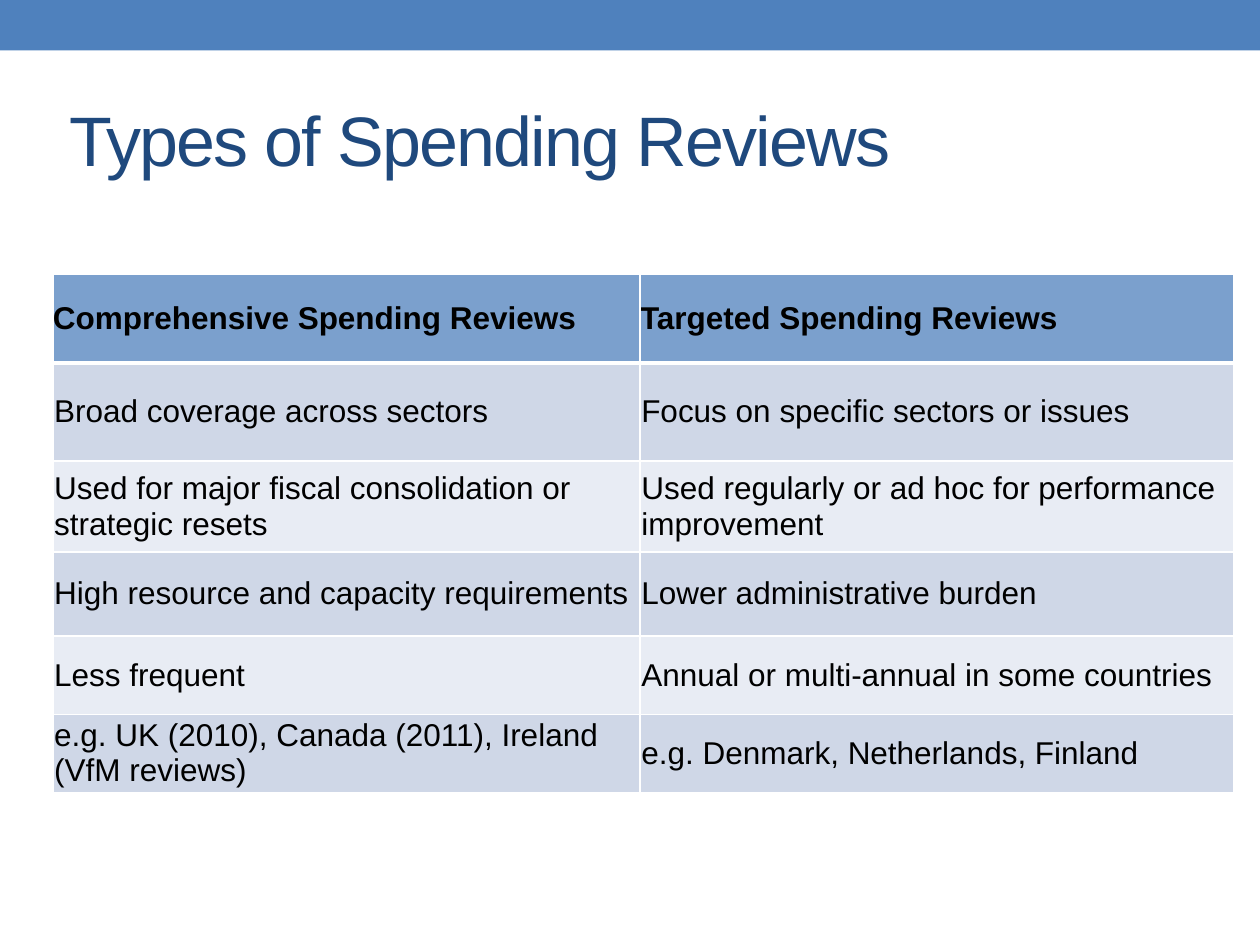
from dataclasses import dataclass

from lxml import etree
from pptx import Presentation, util as u
from pptx.dml.color import RGBColor
from pptx.enum import shapes, text
from pptx.oxml.ns import qn

WIDTH, HEIGHT = 10, 7.5


@dataclass(frozen=True)
class Theme:
    font: str = "Arial"
    bar: str = "4F81BD"
    title: str = "1F497D"
    body: str = "000000"
    header: str = "7BA0CD"
    bands: tuple[str, str] = ("CFD7E7", "E8ECF4")
    rule: str = "FFFFFF"
    title_pt: float = 40
    body_pt: float = 18
    tracking_pt: float = -1
    rule_pt: float = 1
    header_rule_pt: float = 3


@dataclass(frozen=True)
class Box:
    """Position and size in inches."""
    x: float
    y: float
    w: float
    h: float

    def emu(self) -> tuple[int, ...]:
        return tuple(u.Inches(v) for v in (self.x, self.y, self.w, self.h))


@dataclass(frozen=True)
class Row:
    height: float
    comprehensive: str
    targeted: str


THEME = Theme()
BAR = Box(0, 0, WIDTH, 0.4)
TITLE = Box(WIDTH * 0.05, HEIGHT * 0.075, WIDTH * 0.9, HEIGHT * 0.144)
COLUMNS = (4.66, 4.71)
ROWS = (
    Row(0.70, "Comprehensive Spending Reviews", "Targeted Spending Reviews"),
    Row(0.78, "Broad coverage across sectors", "Focus on specific sectors or issues"),
    Row(0.72, "Used for major fiscal consolidation or strategic resets",
        "Used regularly or ad hoc for performance improvement"),
    Row(0.67, "High resource and capacity requirements", "Lower administrative burden"),
    Row(0.62, "Less frequent", "Annual or multi-annual in some countries"),
    Row(0.58, "e.g. UK (2010), Canada (2011), Ireland (VfM reviews)",
        "e.g. Denmark, Netherlands, Finland"),
)
TABLE = Box(0.42, 2.18, sum(COLUMNS), sum(row.height for row in ROWS))


def set_margins(target, inches: float) -> None:
    for side in ("left", "top", "right", "bottom"):
        setattr(target, f"margin_{side}", u.Inches(inches))


def add_run(p, wording: str, size: float, color: str, bold: bool = False):
    r = p.add_run()
    r.text = wording
    r.font.name, r.font.size, r.font.bold = THEME.font, u.Pt(size), bold
    r.font.color.rgb = RGBColor.from_string(color)
    return r


def add_bar(s) -> None:
    sp = s.shapes.add_shape(shapes.MSO_SHAPE.RECTANGLE, *BAR.emu())
    sp.shadow.inherit = False
    sp.fill.solid()
    sp.fill.fore_color.rgb = RGBColor.from_string(THEME.bar)
    sp.line.fill.background()


def add_title(s, wording: str) -> None:
    tf = s.shapes.add_textbox(*TITLE.emu()).text_frame
    tf.word_wrap = True
    tf.vertical_anchor = text.MSO_ANCHOR.MIDDLE
    set_margins(tf, 0.05)
    r = add_run(tf.paragraphs[0], wording, THEME.title_pt, THEME.title)
    r.font._element.set("spc", str(int(THEME.tracking_pt * 100)))


def set_borders(cell, top: float, bottom: float) -> None:
    """Rule the cell on all sides; widths are in points."""
    tc_pr = cell._tc.get_or_add_tcPr()
    widths = {"lnL": THEME.rule_pt, "lnR": THEME.rule_pt, "lnT": top, "lnB": bottom}
    for tag, width in widths.items():
        ln = etree.SubElement(tc_pr, qn(f"a:{tag}"), w=str(u.Pt(width)))
        fill = etree.SubElement(ln, qn("a:solidFill"))
        etree.SubElement(fill, qn("a:srgbClr"), val=THEME.rule)


def fill_cell(cell, wording: str, index: int) -> None:
    is_header = index == 0
    cell.vertical_anchor = text.MSO_ANCHOR.MIDDLE
    set_margins(cell, 0 if is_header else 0.01)
    set_borders(cell,
                top=THEME.header_rule_pt if index == 1 else THEME.rule_pt,
                bottom=THEME.header_rule_pt if is_header else THEME.rule_pt)
    color = THEME.header if is_header else THEME.bands[(index - 1) % 2]
    cell.fill.solid()
    cell.fill.fore_color.rgb = RGBColor.from_string(color)
    add_run(cell.text_frame.paragraphs[0], wording, THEME.body_pt, THEME.body, is_header)


def add_comparison(s) -> None:
    table = s.shapes.add_table(len(ROWS), len(COLUMNS), *TABLE.emu()).table
    for column, width in zip(table.columns, COLUMNS):
        column.width = u.Inches(width)
    for i, row in enumerate(ROWS):
        table.rows[i].height = u.Inches(row.height)
        for j, wording in enumerate((row.comprehensive, row.targeted)):
            fill_cell(table.cell(i, j), wording, i)


def main() -> None:
    prs = Presentation()
    prs.slide_width, prs.slide_height = u.Inches(WIDTH), u.Inches(HEIGHT)
    s = prs.slides.add_slide(prs.slide_layouts[6])
    # Band and heading
    add_bar(s)
    add_title(s, "Types of Spending Reviews")
    # Comparison of the two types
    add_comparison(s)
    prs.save("out.pptx")


if __name__ == "__main__":
    main()
